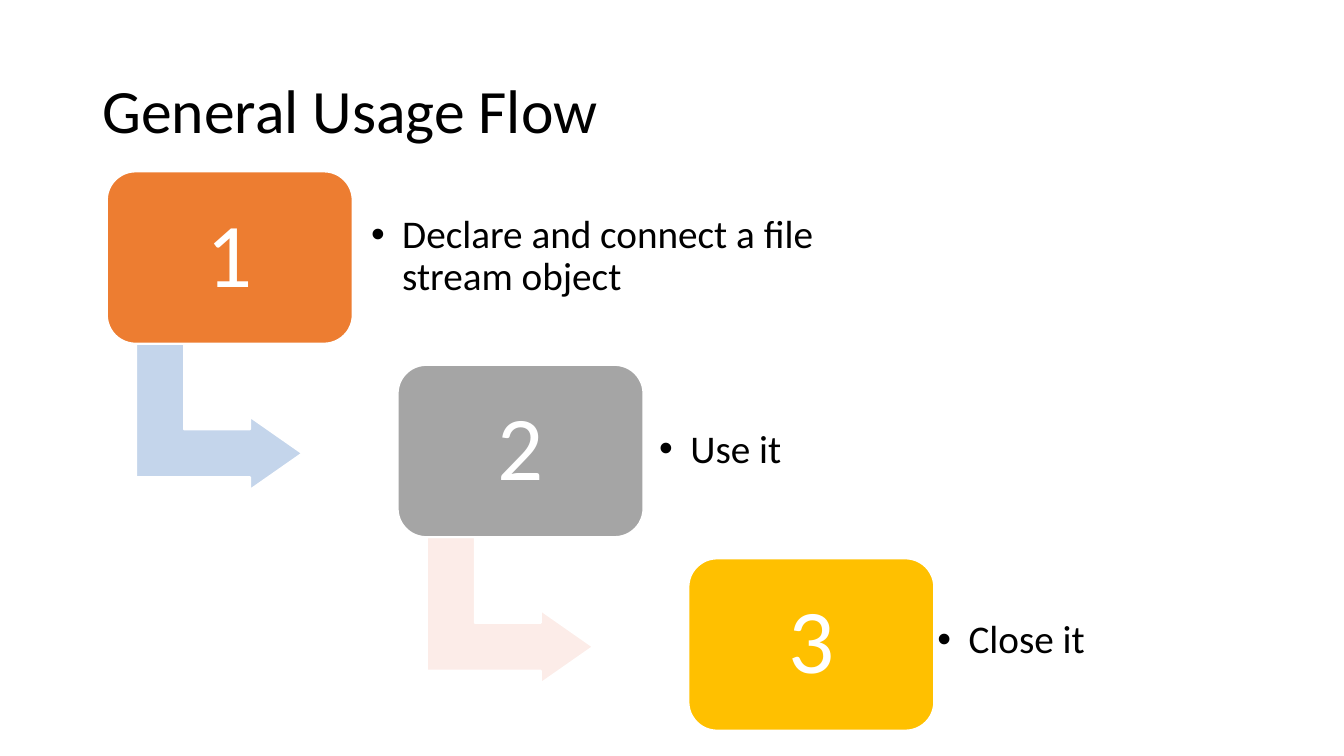
from dataclasses import dataclass

import pptx
import pptx.dml.color
import pptx.enum.shapes
import pptx.enum.text
import pptx.oxml.ns
import pptx.util
from lxml import etree

Pt = pptx.util.Pt
Align = pptx.enum.text.PP_ALIGN
Shape = pptx.enum.shapes.MSO_SHAPE


@dataclass(frozen=True)
class Theme:
    font: str = "Calibri"
    text: str = "000000"
    light: str = "FFFFFF"
    step_fills: tuple = ("ED7D31", "A5A5A5", "FFC000")
    arrow_fills: tuple = ("C4D5EB", "FCECE8")
    title_size: float = 44
    number_size: float = 65
    caption_size: float = 28


THEME = Theme()
STEP_LEFT, STEP_TOP = 76.3, 122.4
STEP_WIDTH, STEP_HEIGHT = 175.7, 123.1
STEP_RIGHT, STEP_DOWN = 207.7, 138.2
ARROW_RIGHT, ARROW_DOWN = 28.1, 115.9
CAPTIONS = (
    ("Declare and connect a file stream object", 254.2, 133.9, 385.2),
    ("Use it", 460.1, 272.2, 128.2),
    ("Close it", 658.8, 408.2, 201.6),
)


def color(value):
    return pptx.dml.color.RGBColor.from_string(value)


def write_text(shape, text, size, fill=THEME.text, align=Align.LEFT,
               inset=None, space_after=0, bullet=False):
    frame = shape.text_frame
    frame.word_wrap = True
    frame.vertical_anchor = pptx.enum.text.MSO_ANCHOR.MIDDLE
    if inset is not None:
        frame.margin_left = frame.margin_right = Pt(inset)
        frame.margin_top = frame.margin_bottom = Pt(inset)
    paragraph = frame.paragraphs[0]
    paragraph.alignment = align
    paragraph.line_spacing = 0.9
    paragraph.space_after = Pt(space_after)
    if bullet:
        add_bullet(paragraph, indent=22.3)
    run = paragraph.add_run()
    run.text = text
    run.font.name = THEME.font
    run.font.size = Pt(size)
    run.font.color.rgb = color(fill)


def add_bullet(paragraph, indent):
    paragraph.level = 1
    properties = paragraph._p.get_or_add_pPr()
    properties.set("marL", str(Pt(indent)))
    properties.set("indent", str(-Pt(indent)))
    font = etree.SubElement(properties, pptx.oxml.ns.qn("a:buFont"))
    font.set("typeface", "Arial")
    character = etree.SubElement(properties, pptx.oxml.ns.qn("a:buChar"))
    character.set("char", "•")


def add_filled_shape(slide, kind, left, top, width, height, fill, adjustments):
    shape = slide.shapes.add_shape(kind, Pt(left), Pt(top), Pt(width), Pt(height))
    shape.shadow.inherit = False
    shape.fill.solid()
    shape.fill.fore_color.rgb = color(fill)
    shape.line.color.rgb = color(THEME.light)
    shape.line.width = Pt(1.5)
    for index, value in enumerate(adjustments):
        shape.adjustments[index] = value
    return shape


def add_title(slide, text):
    title = slide.shapes.title
    title.left, title.top = Pt(66), Pt(28.8)
    title.width, title.height = Pt(828), Pt(104.4)
    write_text(title, text, THEME.title_size)


def add_arrow(slide, left, top, fill):
    arrow = add_filled_shape(slide, Shape.BENT_UP_ARROW, left, top, 104.4, 118.8,
                             fill, (0.328, 0.25, 0.358))
    arrow.rotation = 90


def add_step(slide, left, top, number, fill):
    step = add_filled_shape(slide, Shape.ROUNDED_RECTANGLE, left, top,
                            STEP_WIDTH, STEP_HEIGHT, fill, (0.167,))
    write_text(step, str(number), THEME.number_size, fill=THEME.light,
               align=Align.CENTER, inset=19.4, space_after=22.75)


def add_caption(slide, text, left, top, width):
    box = slide.shapes.add_textbox(Pt(left), Pt(top), Pt(width), Pt(99.4))
    write_text(box, text, THEME.caption_size, inset=10.8, space_after=4.2, bullet=True)


def main():
    presentation = pptx.Presentation()
    presentation.slide_width, presentation.slide_height = Pt(960), Pt(540)
    slide = presentation.slides.add_slide(presentation.slide_layouts[5])
    add_title(slide, "General Usage Flow")
    for index, caption in enumerate(CAPTIONS):
        left = STEP_LEFT + index * STEP_RIGHT
        top = STEP_TOP + index * STEP_DOWN
        if index < len(THEME.arrow_fills):
            add_arrow(slide, left + ARROW_RIGHT, top + ARROW_DOWN,
                      THEME.arrow_fills[index])
        add_step(slide, left, top, index + 1, THEME.step_fills[index])
        add_caption(slide, *caption)
    presentation.save("out.pptx")


if __name__ == "__main__":
    main()
